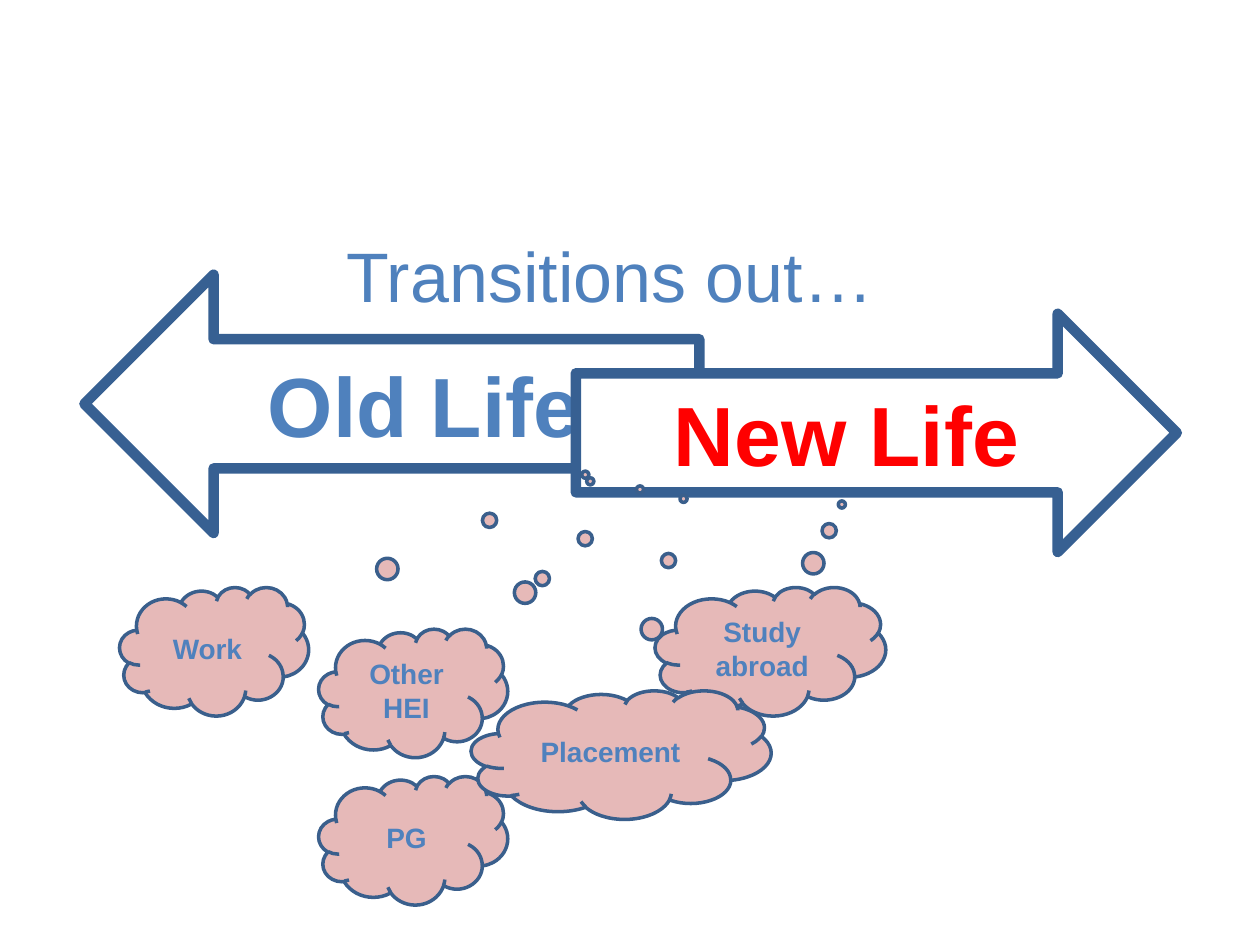
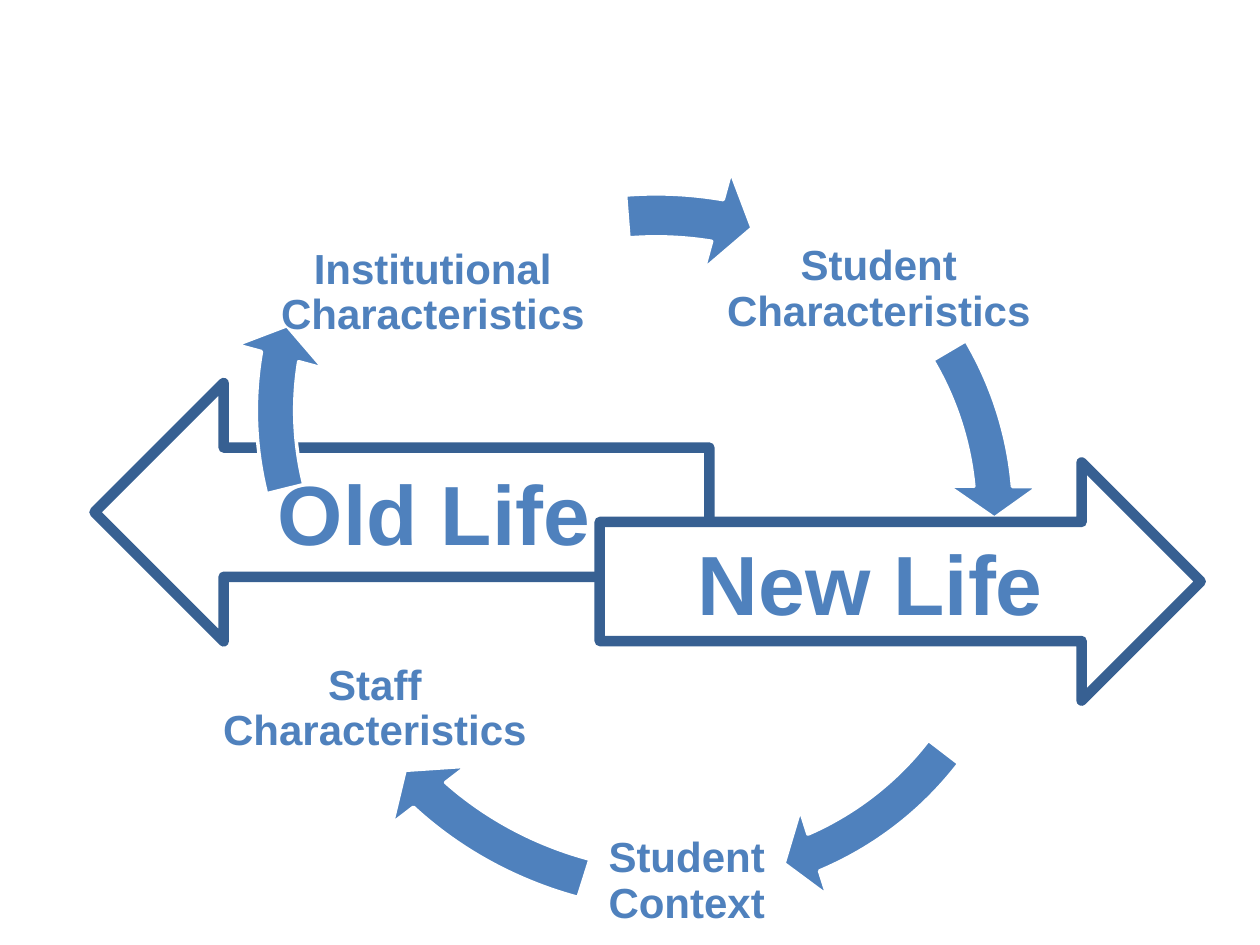
from pptx import Presentation
from pptx.dml.color import RGBColor
from pptx.enum.shapes import MSO_SHAPE
from pptx.enum.text import MSO_ANCHOR, PP_ALIGN
from pptx.util import Inches, Pt

BLUE = RGBColor(0x4F, 0x81, 0xBD)
NAVY = RGBColor(0x37, 0x60, 0x92)
SLATE = RGBColor(0x3A, 0x5F, 0x8C)
PINK = RGBColor(0xE6, 0xB9, 0xB8)
RED = RGBColor(0xFF, 0x00, 0x00)
WHITE = RGBColor(0xFF, 0xFF, 0xFF)
FONT = "Arial"
TITLE_ONLY, BLANK = 5, 6
OLD_SIZE = (4.88, 2.05)
NEW_SIZE = (4.77, 1.89)


class Deck:
    def __init__(self):
        self.prs = Presentation()
        self.prs.slide_width = Inches(10)
        self.prs.slide_height = Inches(7.5)
        self.slide = None

    def start(self, layout):
        self.slide = self.prs.slides.add_slide(self.prs.slide_layouts[layout])

    def words(self, frame, text, size, color=BLUE, bold=True):
        frame.word_wrap = True
        frame.vertical_anchor = MSO_ANCHOR.MIDDLE
        para = frame.paragraphs[0]
        para.alignment = PP_ALIGN.CENTER
        run = para.add_run()
        run.text = text
        run.font.name = FONT
        run.font.size = Pt(size)
        run.font.bold = bold
        run.font.color.rgb = color
        return para

    def title(self, text, box):
        holder = self.slide.shapes.title
        holder.left, holder.top, holder.width, holder.height = map(Inches, box)
        self.words(holder.text_frame, text, 40, bold=False)

    def shape(self, kind, box, fill, line, width, adjust=()):
        shape = self.slide.shapes.add_shape(kind, *map(Inches, box))
        shape.shadow.inherit = False
        shape.fill.solid()
        shape.fill.fore_color.rgb = fill
        shape.line.color.rgb = line
        shape.line.width = Pt(width)
        for index, value in enumerate(adjust):
            shape.adjustments[index] = value
        return shape

    def arrow(self, kind, spot, size, text, color=BLUE):
        shape = self.shape(kind, spot + size, WHITE, NAVY, 6)
        self.words(shape.text_frame, text, 48, color)

    def old_life(self, *spot):
        self.arrow(MSO_SHAPE.LEFT_ARROW, spot, OLD_SIZE, "Old Life")

    def new_life(self, *spot, color=BLUE):
        self.arrow(MSO_SHAPE.RIGHT_ARROW, spot, NEW_SIZE, "New Life", color)

    def cloud(self, text, left, top, width, tail):
        shape = self.shape(MSO_SHAPE.CLOUD_CALLOUT, (left, top, width, 1.02),
                           PINK, SLATE, 2, tail)
        self.words(shape.text_frame, text, 16)

    def curve(self, box, head, tail, turn=0):
        shape = self.shape(MSO_SHAPE.CIRCULAR_ARROW, box, BLUE, WHITE, 2,
                           (0.052, 3.358, head, tail, 0.061))
        shape.rotation = turn

    def label(self, text, left, top, width):
        box = self.slide.shapes.add_textbox(*map(Inches, (left, top, width, 1.56)))
        frame = box.text_frame
        frame.margin_left = frame.margin_right = Inches(0.03)
        frame.margin_top = frame.margin_bottom = Inches(0.03)
        self.words(frame, text, 24).line_spacing = 0.9


def ways_out(deck):
    deck.start(TITLE_ONLY)
    deck.title("Transitions out…", (0.34, 1.55, 9, 1.25))
    deck.old_life(0.67, 2.18)
    deck.new_life(4.57, 2.49, color=RED)
    for cloud in (
        ("Work", 0.95, 4.66, 1.5, (1.964, -1.375)),
        ("PG", 2.53, 6.16, 1.5, (0.937, -2.794)),
        ("Study abroad", 5.2, 4.66, 1.83, (0.31, -1.143)),
        ("Other HEI", 2.53, 4.99, 1.5, (1.2, -1.584)),
        ("Placement", 3.74, 5.48, 2.38, (0.208, -1.991)),
    ):
        deck.cloud(*cloud)


def cycle(deck):
    deck.start(BLANK)
    deck.old_life(0.75, 3.04)
    for label in (
        ("Student Characteristics", 5.61, 1.52, 2.73),
        ("Student Context", 4.67, 6.22, 1.56),
        ("Staff Characteristics", 1.62, 4.85, 2.71),
    ):
        deck.label(*label)
    for curve in (
        ((2.39, 1.16, 5.86, 5.86), 212.937, 197.658),
        ((2.52, 1.47, 5.86, 5.86), 40.152, 22.53),
        ((2.17, 1.35, 6.55, 6.1), 82.112, 64.49),
        ((1.83, 0.33, 5.86, 5.86), 113.76, 99.596),
    ):
        deck.curve(*curve)
    deck.label("Institutional Characteristics", 2.13, 1.55, 2.61)
    deck.curve((1.89, 1.31, 6.62, 6.56), 172.544, 163.974, 352.3)
    deck.new_life(4.76, 3.67)


def main():
    deck = Deck()
    ways_out(deck)
    cycle(deck)
    deck.prs.save("out.pptx")


if __name__ == "__main__":
    main()
